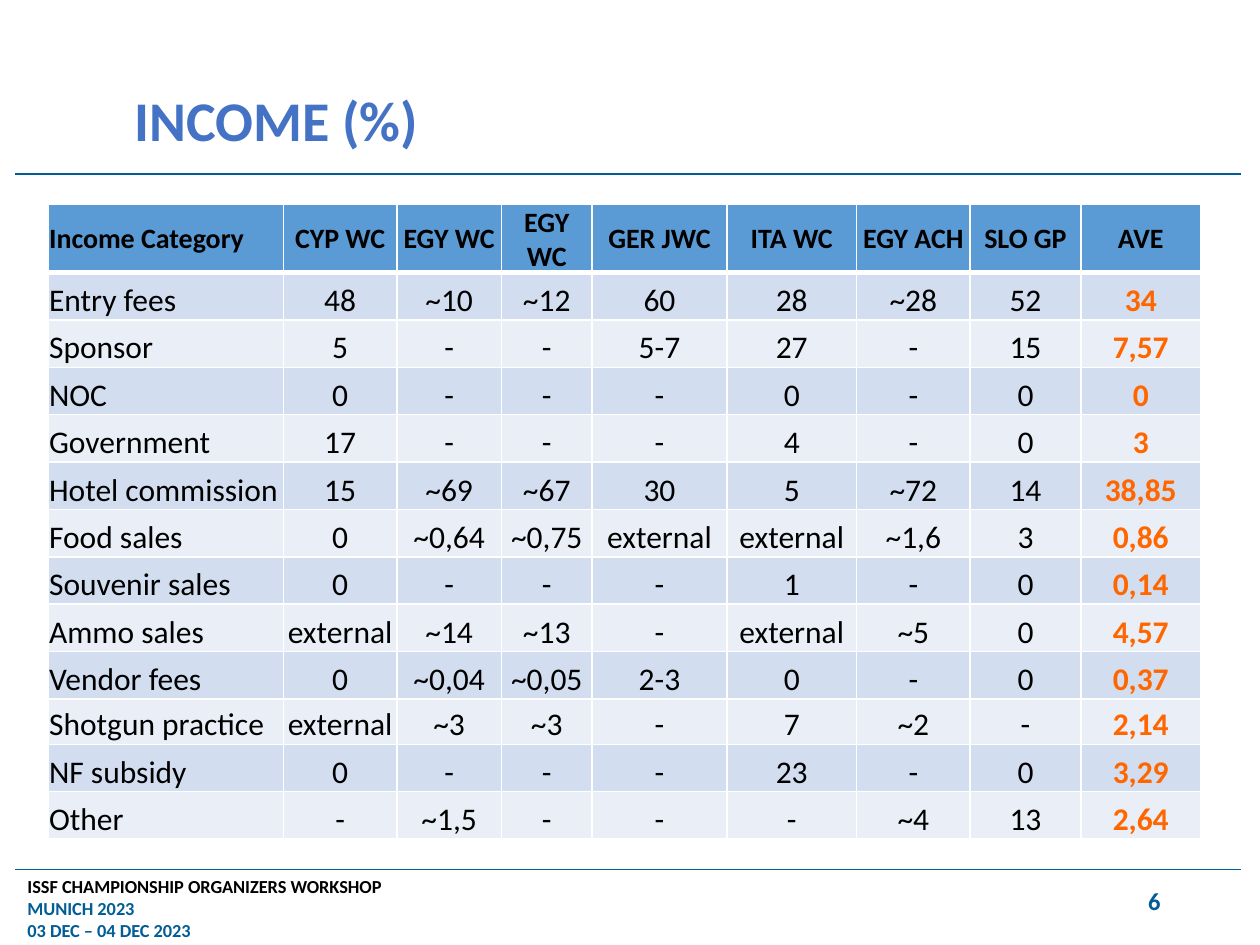
"""Build the income breakdown slide with its table, title and footer."""
import lxml.etree
import pptx
import pptx.dml.color
import pptx.enum.shapes
import pptx.enum.text
import pptx.oxml.ns
import pptx.util

Inches = pptx.util.Inches
Align = pptx.enum.text.PP_ALIGN
Anchor = pptx.enum.text.MSO_ANCHOR

FONT = "Calibri"
COLORS = {
    "title": "4472C4",
    "brand": "005D95",
    "text": "000000",
    "average": "FF6600",
    "header": "5B9BD5",
    "dark_band": "D2DEEF",
    "light_band": "EAEFF7",
    "border": "FFFFFF",
}

TITLE = "INCOME (%)"
PAGE_NUMBER = "6"
FOOTER = [
    ("ISSF CHAMPIONSHIP ORGANIZERS WORKSHOP", "text"),
    ("MUNICH 2023", "brand"),
    ("03 DEC – 04 DEC 2023", "brand"),
]
INCOME = [
    ("Income Category", "CYP WC", "EGY WC", "EGY WC", "GER JWC", "ITA WC", "EGY ACH", "SLO GP", "AVE"),
    ("Entry fees", "48", "~10", "~12", "60", "28", "~28", "52", "34"),
    ("Sponsor", "5", "-", "-", "5-7", "27", "-", "15", "7,57"),
    ("NOC", "0", "-", "-", "-", "0", "-", "0", "0"),
    ("Government", "17", "-", "-", "-", "4", "-", "0", "3"),
    ("Hotel commission", "15", "~69", "~67", "30", "5", "~72", "14", "38,85"),
    ("Food sales", "0", "~0,64", "~0,75", "external", "external", "~1,6", "3", "0,86"),
    ("Souvenir sales", "0", "-", "-", "-", "1", "-", "0", "0,14"),
    ("Ammo sales", "external", "~14", "~13", "-", "external", "~5", "0", "4,57"),
    ("Vendor fees", "0", "~0,04", "~0,05", "2-3", "0", "-", "0", "0,37"),
    ("Shotgun practice", "external", "~3", "~3", "-", "7", "~2", "-", "2,14"),
    ("NF subsidy", "0", "-", "-", "-", "23", "-", "0", "3,29"),
    ("Other", "-", "~1,5", "-", "-", "-", "~4", "13", "2,64"),
]
COLUMN_WIDTHS = [1.87, 0.9, 0.83, 0.72, 1.07, 1.03, 0.9, 0.88, 0.95]
TABLE_HEIGHT = 5.04
HEADER_HEIGHT = 0.35
WRAPPED_HEADER_HEIGHT = 0.54
SHORT_ROW, SHORT_ROW_HEIGHT = 10, 0.36
ROW_HEIGHT = (TABLE_HEIGHT - WRAPPED_HEADER_HEIGHT - SHORT_ROW_HEIGHT) / (len(INCOME) - 2)


def rgb(name):
    return pptx.dml.color.RGBColor.from_string(COLORS[name])


def write(para, text, size, color, bold=True, align=Align.LEFT):
    para.alignment = align
    span = para.add_run()
    span.text = text
    span.font.name = FONT
    span.font.size = pptx.util.Pt(size)
    span.font.bold = bold
    span.font.color.rgb = rgb(color)


def add_box(page, left, top, width, height, anchor=Anchor.TOP):
    box = page.shapes.add_textbox(Inches(left), Inches(top), Inches(width), Inches(height))
    box.text_frame.word_wrap = True
    box.text_frame.vertical_anchor = anchor
    return box.text_frame


def add_rule(page, top):
    rule = page.shapes.add_connector(
        pptx.enum.shapes.MSO_CONNECTOR.STRAIGHT, Inches(0.12), Inches(top), Inches(9.85), Inches(top)
    )
    rule.line.color.rgb = rgb("brand")
    rule.line.width = pptx.util.Pt(0.75)
    lxml.etree.SubElement(rule._element.spPr, pptx.oxml.ns.qn("a:effectLst"))


def set_borders(cell, row):
    properties = cell._tc.get_or_add_tcPr()
    widths = {"L": 1, "R": 1, "T": 3 if row == 1 else 1, "B": 3 if row == 0 else 1}
    for position, (side, width) in enumerate(widths.items()):
        line = lxml.etree.Element(pptx.oxml.ns.qn("a:ln" + side), w=str(pptx.util.Pt(width)))
        fill = lxml.etree.SubElement(line, pptx.oxml.ns.qn("a:solidFill"))
        lxml.etree.SubElement(fill, pptx.oxml.ns.qn("a:srgbClr"), val=COLORS["border"])
        properties.insert(position, line)


def fill_cell(cell, text, row, column):
    is_header = row == 0
    is_average = not is_header and column == len(COLUMN_WIDTHS) - 1
    band = "header" if is_header else "dark_band" if row % 2 else "light_band"
    cell.fill.solid()
    cell.fill.fore_color.rgb = rgb(band)
    cell.margin_left = cell.margin_right = cell.margin_top = Inches(0.01)
    cell.margin_bottom = 0
    cell.vertical_anchor = Anchor.MIDDLE if is_header else Anchor.BOTTOM
    write(
        cell.text_frame.paragraphs[0],
        text,
        16 if is_header else 18,
        "average" if is_average else "text",
        is_header or is_average,
        Align.CENTER if column else Align.LEFT,
    )
    set_borders(cell, row)


def add_income_table(page):
    frame = page.shapes.add_table(
        len(INCOME), len(COLUMN_WIDTHS),
        Inches(0.38), Inches(1.62), Inches(sum(COLUMN_WIDTHS)), Inches(TABLE_HEIGHT),
    )
    table = frame.table
    for column, width in enumerate(COLUMN_WIDTHS):
        table.columns[column].width = Inches(width)
    special_heights = {0: HEADER_HEIGHT, SHORT_ROW: SHORT_ROW_HEIGHT}
    for row, values in enumerate(INCOME):
        table.rows[row].height = Inches(special_heights.get(row, ROW_HEIGHT))
        for column, text in enumerate(values):
            fill_cell(table.cell(row, column), text, row, column)


def main():
    deck = pptx.Presentation()
    deck.slide_width, deck.slide_height = Inches(10), Inches(7.5)
    page = deck.slides.add_slide(deck.slide_layouts[6])

    for top in (1.38, 6.9):
        add_rule(page, top)

    footer = add_box(page, 0.12, 6.9, 9.8, 0.93)
    for index, (text, color) in enumerate(FOOTER):
        para = footer.add_paragraph() if index else footer.paragraphs[0]
        write(para, text, 10.5, color)

    title = add_box(page, 0.97, 0.6, 7.09, 0.67, Anchor.BOTTOM).paragraphs[0]
    title.line_spacing = 0.9
    write(title, TITLE, 32, "title")

    add_income_table(page)

    number = add_box(page, 7.06, 6.95, 2.25, 0.4, Anchor.MIDDLE).paragraphs[0]
    write(number, PAGE_NUMBER, 14, "brand", align=Align.RIGHT)

    deck.save("out.pptx")


if __name__ == "__main__":
    main()
